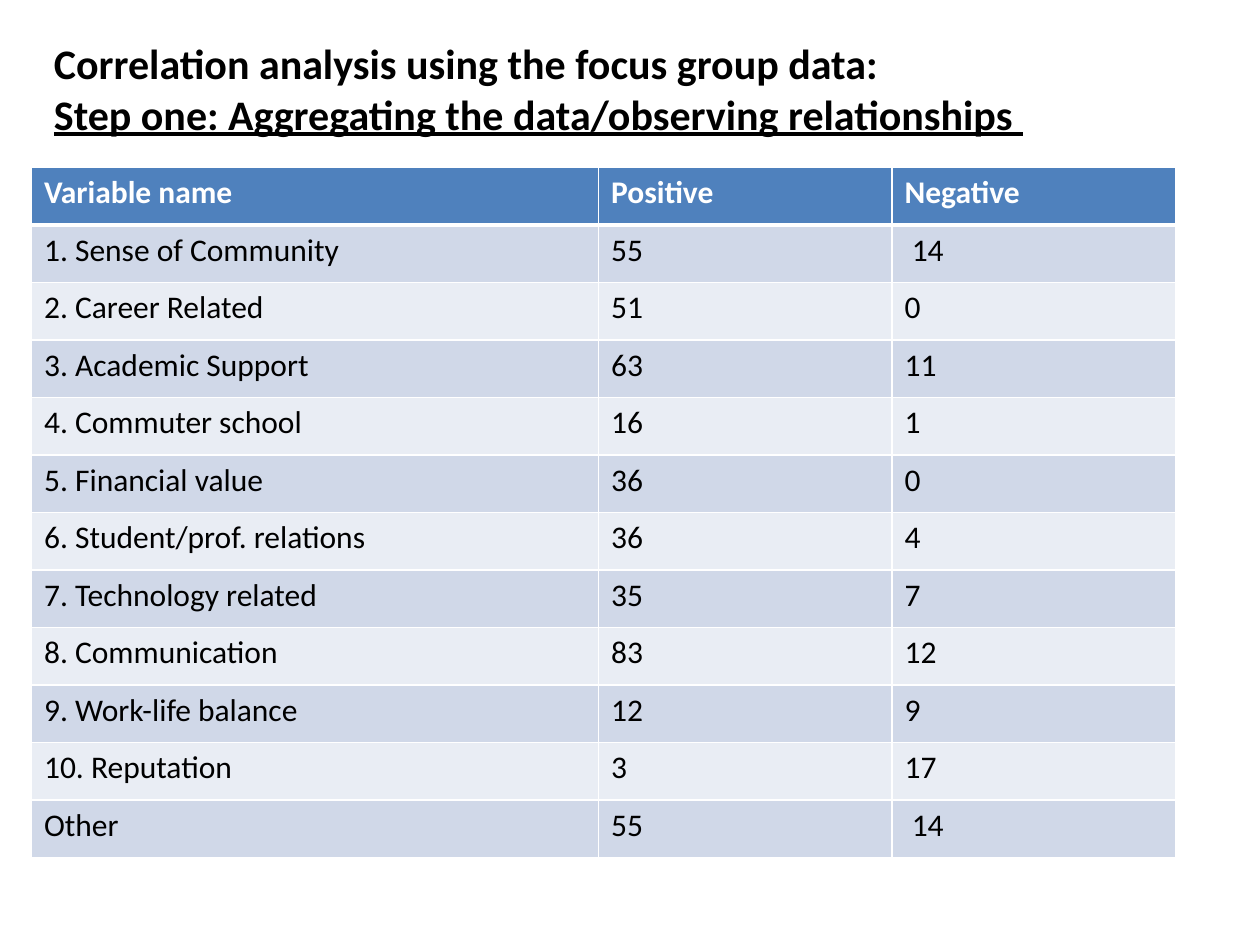
from lxml.etree import SubElement
from pptx import Presentation
from pptx.dml.color import RGBColor
from pptx.oxml.ns import qn
from pptx.util import Inches, Pt

HEADERS = ("Variable name", "Positive", "Negative")
VARIABLES = [
    ("1. Sense of Community", "55", " 14"),
    ("2. Career Related", "51", "0"),
    ("3. Academic Support", "63", "11"),
    ("4. Commuter school", "16", "1"),
    ("5. Financial value", "36", "0"),
    ("6. Student/prof. relations", "36", "4"),
    ("7. Technology related", "35", "7"),
    ("8. Communication", "83", "12"),
    ("9. Work-life balance", "12", "9"),
    ("10. Reputation", "3", "17"),
    ("Other", "55", " 14"),
]


def color(hex_code):
    return RGBColor.from_string(hex_code)


def write(paragraph, text, size=18, ink="000000", bold=False, underline=False):
    run = paragraph.add_run()
    run.text = text
    font = run.font
    font.name = SlideBuilder.FONT
    font.size = Pt(size)
    font.bold = bold
    font.underline = underline
    font.color.rgb = color(ink)


class SlideBuilder:
    """Style of the deck and the slide being filled."""

    FONT = "Calibri"
    WHITE = "FFFFFF"
    HEADER_FILL = "4F81BD"
    BANDS = ("E9EDF4", "D0D8E8")

    def __init__(self, slide):
        self.slide = slide

    def heading(self, lines, left, top, width, height):
        """Add a text box; lines holds (text, underlined) pairs."""
        frame = self.slide.shapes.add_textbox(
            Inches(left), Inches(top), Inches(width), Inches(height)).text_frame
        frame.word_wrap = True
        for index, (text, underlined) in enumerate(lines):
            paragraph = frame.add_paragraph() if index else frame.paragraphs[0]
            write(paragraph, text, size=24, bold=True, underline=underlined)

    def borders(self, cell, top, bottom):
        """Draw white cell edges; top and bottom are widths in points."""
        properties = cell._tc.get_or_add_tcPr()
        for edge, width in (("L", 1), ("R", 1), ("T", top), ("B", bottom)):
            line = SubElement(properties, qn(f"a:ln{edge}"), w=str(Pt(width)))
            fill = SubElement(line, qn("a:solidFill"))
            SubElement(fill, qn("a:srgbClr"), val=self.WHITE)

    def table(self, rows, left, top, column_widths, row_height):
        table = self.slide.shapes.add_table(
            len(rows), len(column_widths), Inches(left), Inches(top),
            Inches(sum(column_widths)), Inches(row_height * len(rows))).table
        for column, width in zip(table.columns, column_widths):
            column.width = Inches(width)
        for row_index, values in enumerate(rows):
            table.rows[row_index].height = Inches(row_height)
            is_header = row_index == 0
            for column_index, value in enumerate(values):
                cell = table.cell(row_index, column_index)
                self.borders(cell, top=3 if row_index == 1 else 1,
                             bottom=3 if is_header else 1)
                cell.fill.solid()
                cell.fill.fore_color.rgb = color(
                    self.HEADER_FILL if is_header else self.BANDS[row_index % 2])
                write(cell.text_frame.paragraphs[0], value, bold=is_header,
                      ink=self.WHITE if is_header else "000000")


def main():
    deck = Presentation()
    deck.slide_width = Inches(10)
    deck.slide_height = Inches(7.5)
    builder = SlideBuilder(deck.slides.add_slide(deck.slide_layouts[6]))
    builder.table([HEADERS, *VARIABLES], 0.25, 1.33,
                  column_widths=(4.5, 2.33, 2.25), row_height=5.48 / 12)
    builder.heading([
        ("Correlation analysis using the focus group data:", False),
        ("Step one: Aggregating the data/observing relationships ", True),
    ], 0.33, 0.25, 9.17, 0.91)
    deck.save("out.pptx")


if __name__ == "__main__":
    main()
